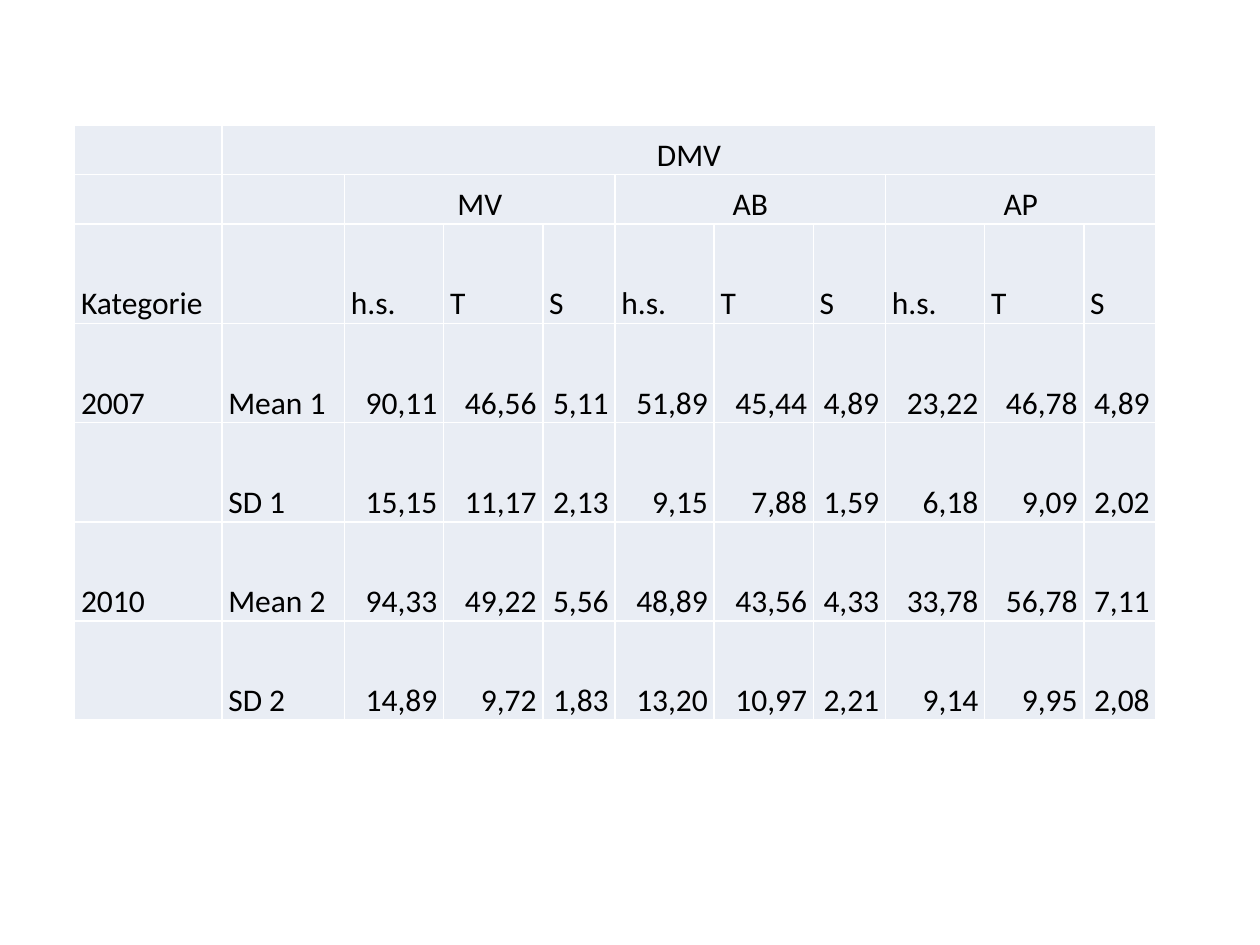
"""Build a slide with a table of DMV means and standard deviations."""
from lxml.etree import SubElement
from pptx import Presentation
from pptx.dml.color import RGBColor
from pptx.enum.text import MSO_ANCHOR, PP_ALIGN
from pptx.oxml.ns import qn
from pptx.util import Pt

COLORS = {"text": "000000", "cell": "E9EDF4", "border": "FFFFFF"}
GROUPS = ["MV", "AB", "AP"]
MEASURES = ["h.s.", "T", "S"]
DATA = [
    ["2007", "Mean 1", "90,11", "46,56", "5,11", "51,89", "45,44", "4,89", "23,22", "46,78", "4,89"],
    ["", "SD 1", "15,15", "11,17", "2,13", "9,15", "7,88", "1,59", "6,18", "9,09", "2,02"],
    ["2010", "Mean 2", "94,33", "49,22", "5,56", "48,89", "43,56", "4,33", "33,78", "56,78", "7,11"],
    ["", "SD 2", "14,89", "9,72", "1,83", "13,20", "10,97", "2,21", "9,14", "9,95", "2,08"],
]
LEFT, TOP = 42.7, 71.4
LABELS, STEP = 2, len(MEASURES)
WIDTHS = [84.2, 70] + [56.7, 56.7, 41.2] * len(GROUPS)
HEIGHTS = [28.35] * 2 + [56.7] * 5
HEADS = [
    ["", "DMV"] + [""] * (len(WIDTHS) - 2),
    [""] * LABELS + [t for g in GROUPS for t in [g] + [""] * (STEP - 1)],
    ["Kategorie", ""] + MEASURES * len(GROUPS),
]


def add_borders(cell, color, width):
    tcPr = cell._tc.get_or_add_tcPr()
    for side in ("lnL", "lnR", "lnT", "lnB"):
        ln = SubElement(tcPr, qn(f"a:{side}"), w=str(Pt(width)))
        fill = SubElement(ln, qn("a:solidFill"))
        SubElement(fill, qn("a:srgbClr"), val=color)


def write(cell, text, align=PP_ALIGN.LEFT, size=18, font="Calibri", color=COLORS["text"]):
    p = cell.text_frame.paragraphs[0]
    p.alignment = align
    if text:
        r = p.add_run()
        r.text = text
        r.font.size, r.font.name = Pt(size), font
        r.font.color.rgb = RGBColor.from_string(color)


def alignment(row, col):
    if row < 2:
        return PP_ALIGN.CENTER
    return PP_ALIGN.RIGHT if row >= len(HEADS) and col >= LABELS else PP_ALIGN.LEFT


def main():
    prs = Presentation()
    prs.slide_width, prs.slide_height = Pt(720), Pt(540)
    s = prs.slides.add_slide(prs.slide_layouts[6])
    rows = HEADS + DATA
    table = s.shapes.add_table(len(rows), len(WIDTHS), Pt(LEFT), Pt(TOP),
                               Pt(sum(WIDTHS)), Pt(sum(HEIGHTS))).table
    table.first_row = table.horz_banding = False
    for column, width in zip(table.columns, WIDTHS):
        column.width = Pt(width)
    for row, height in zip(table.rows, HEIGHTS):
        row.height = Pt(height)

    for i, texts in enumerate(rows):
        for j, text in enumerate(texts):
            cell = table.cell(i, j)
            cell.margin_left = cell.margin_right = Pt(3.6)
            cell.margin_top = cell.margin_bottom = Pt(0)
            cell.vertical_anchor = MSO_ANCHOR.BOTTOM
            add_borders(cell, COLORS["border"], 1)
            cell.fill.solid()
            cell.fill.fore_color.rgb = RGBColor.from_string(COLORS["cell"])
            write(cell, text, align=alignment(i, j))

    table.cell(0, 1).merge(table.cell(0, len(WIDTHS) - 1))
    for col in range(LABELS, len(WIDTHS), STEP):
        table.cell(1, col).merge(table.cell(1, col + STEP - 1))
    prs.save("out.pptx")


if __name__ == "__main__":
    main()
